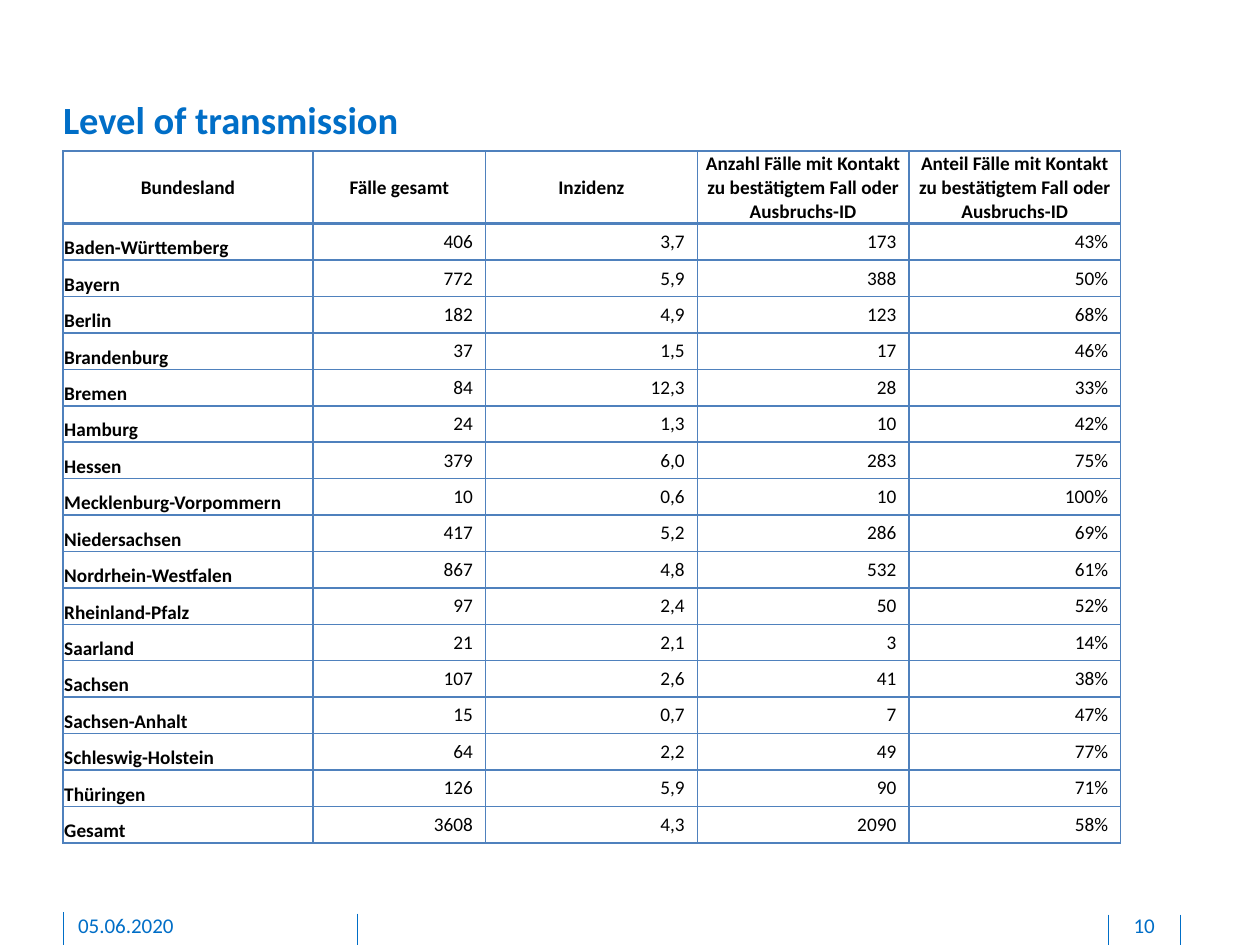
from lxml.etree import SubElement
from pptx import Presentation
from pptx.dml.color import RGBColor
from pptx.enum.shapes import MSO_CONNECTOR
from pptx.enum.text import MSO_ANCHOR, MSO_AUTO_SIZE, PP_ALIGN
from pptx.oxml.ns import qn
from pptx.util import Pt

HEX = {"blue": "006EC7", "grid": "4F81BD", "ink": "000000"}
FONT = "Calibri"
TITLE = "Level of transmission"
HEAD = (
    "Bundesland", "Fälle gesamt", "Inzidenz",
    "Anzahl Fälle mit Kontakt zu bestätigtem Fall oder Ausbruchs-ID",
    "Anteil Fälle mit Kontakt zu bestätigtem Fall oder Ausbruchs-ID",
)
ROWS = [
    ("Baden-Württemberg", "406", "3,7", "173", "43%"),
    ("Bayern", "772", "5,9", "388", "50%"),
    ("Berlin", "182", "4,9", "123", "68%"),
    ("Brandenburg", "37", "1,5", "17", "46%"),
    ("Bremen", "84", "12,3", "28", "33%"),
    ("Hamburg", "24", "1,3", "10", "42%"),
    ("Hessen", "379", "6,0", "283", "75%"),
    ("Mecklenburg-Vorpommern", "10", "0,6", "10", "100%"),
    ("Niedersachsen", "417", "5,2", "286", "69%"),
    ("Nordrhein-Westfalen", "867", "4,8", "532", "61%"),
    ("Rheinland-Pfalz", "97", "2,4", "50", "52%"),
    ("Saarland", "21", "2,1", "3", "14%"),
    ("Sachsen", "107", "2,6", "41", "38%"),
    ("Sachsen-Anhalt", "15", "0,7", "7", "47%"),
    ("Schleswig-Holstein", "64", "2,2", "49", "77%"),
    ("Thüringen", "126", "5,9", "90", "71%"),
    ("Gesamt", "3608", "4,3", "2090", "58%"),
]
WIDTHS = (143, 98.5, 121, 121, 121)
HEAD_H, ROW_H = 41, 20.83
LEFT, TOP = 36, 86.4

# x and top of each footer rule
RULES = [(204.5, 522), (36, 521.3), (674.6, 522.7), (633.6, 522.7)]
# text, left, width, alignment
FOOT = [
    ("05.06.2020", 44.6, 146, PP_ALIGN.LEFT),
    ("10", 634.3, 39, PP_ALIGN.CENTER),
]
FOOT_Y, FOOT_H = 521.3, 15.1


def write(para, text, size, color, bold=False, align=PP_ALIGN.LEFT):
    para.alignment = align
    run = para.add_run()
    run.text = text
    font = run.font
    font.name, font.size, font.bold = FONT, Pt(size), bold
    font.color.rgb = RGBColor.from_string(HEX[color])


def inset(frame, bottom=0):
    frame.margin_left = frame.margin_right = frame.margin_top = 0
    frame.margin_bottom = Pt(bottom)
    frame.word_wrap = True
    frame.auto_size = MSO_AUTO_SIZE.NONE


def place(shape, x, y, w, h):
    shape.left, shape.top, shape.width, shape.height = map(Pt, (x, y, w, h))


def edge(cell, side, width):
    line = SubElement(cell._tc.get_or_add_tcPr(), qn(f"a:ln{side}"), w=str(Pt(width)))
    fill = SubElement(line, qn("a:solidFill"))
    SubElement(fill, qn("a:srgbClr"), val=HEX["grid"])


def fill_cell(cell, text, row, col):
    head, name = row == 0, col == 0
    if head or name:
        cell.margin_left = cell.margin_right = cell.margin_top = Pt(0.72)
        cell.margin_bottom = 0
    cell.vertical_anchor = MSO_ANCHOR.MIDDLE if head else MSO_ANCHOR.BOTTOM
    for side in "LRTB":
        thick = (row, side) in ((0, "B"), (1, "T"))
        edge(cell, side, 2 if thick else 1)
    cell.fill.background()
    align = PP_ALIGN.CENTER if head else PP_ALIGN.LEFT if name else PP_ALIGN.RIGHT
    write(cell.text_frame.paragraphs[0], text, 11, "ink", head or name, align)


def add_grid(slide):
    data = [HEAD] + ROWS
    high = HEAD_H + ROW_H * len(ROWS)
    frame = slide.shapes.add_table(
        len(data), len(HEAD), Pt(LEFT), Pt(TOP), Pt(sum(WIDTHS)), Pt(high))
    table = frame.table
    table.horz_banding = False
    for col, wide in zip(table.columns, WIDTHS):
        col.width = Pt(wide)
    for r, texts in enumerate(data):
        table.rows[r].height = Pt(ROW_H if r else HEAD_H)
        for c, text in enumerate(texts):
            fill_cell(table.cell(r, c), text, r, c)


def add_foot(slide, end):
    for x, y in RULES:
        rule = slide.shapes.add_connector(
            MSO_CONNECTOR.STRAIGHT, Pt(x), Pt(y), Pt(x), Pt(end))
        rule.line.width = Pt(0.5)
        rule.line.color.rgb = RGBColor.from_string(HEX["blue"])
        SubElement(rule._element.spPr, qn("a:effectLst"))
    for text, x, wide, align in FOOT:
        box = slide.shapes.add_textbox(Pt(x), Pt(FOOT_Y), Pt(wide), Pt(FOOT_H))
        inset(box.text_frame, 3.6)
        write(box.text_frame.paragraphs[0], text, 12, "blue", align=align)


def main():
    deck = Presentation()
    deck.slide_width, deck.slide_height = Pt(720), Pt(540)
    slide = deck.slides.add_slide(deck.slide_layouts[5])
    add_foot(slide, 540)
    title = slide.shapes.title
    place(title, LEFT, 54.7, 637, 26.6)
    inset(title.text_frame)
    title.text_frame.vertical_anchor = MSO_ANCHOR.MIDDLE
    write(title.text_frame.paragraphs[0], TITLE, 22, "blue", True)
    add_grid(slide)
    deck.save("out.pptx")


if __name__ == "__main__":
    main()
